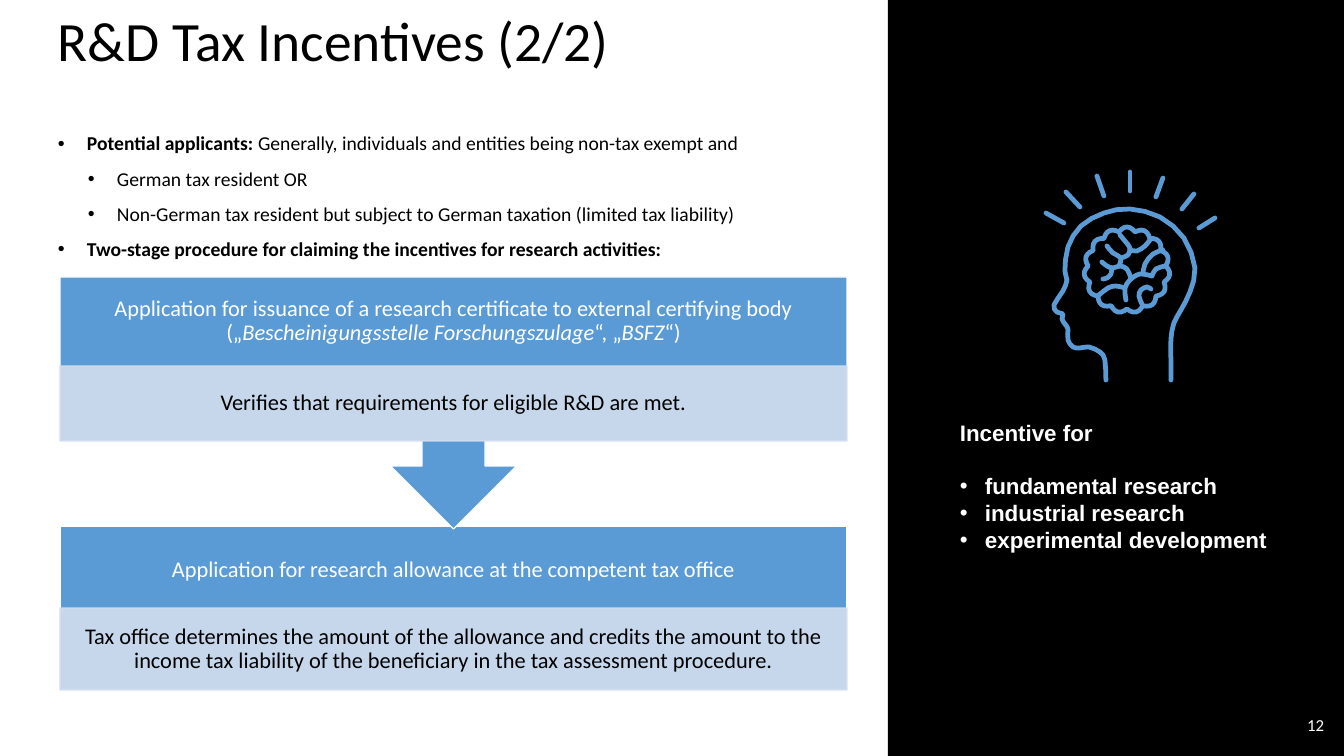
from math import cos, pi, sin

from lxml.etree import SubElement
from pptx import Presentation
from pptx.dml.color import RGBColor
from pptx.enum.shapes import MSO_SHAPE as SHAPE
from pptx.enum.text import MSO_ANCHOR as ANCHOR, PP_ALIGN as ALIGN
from pptx.oxml.ns import qn
from pptx.util import Pt

PX = 9071  # EMU per px, 100.8 px to the inch
COLORS = {"black": "000000", "white": "FFFFFF", "blue": "5B9BD5", "pale": "D2DEEF"}
COLORS = {name: RGBColor.from_string(value) for name, value in COLORS.items()}

presentation = Presentation()
presentation.slide_width, presentation.slide_height = 1344 * PX, 756 * PX
slide = presentation.slides.add_slide(presentation.slide_layouts[6])


def add_text(frame, text, size, color="black", font="Calibri", bold=False, align=ALIGN.LEFT,
             spacing=None, before=0, after=0, bullet_at=None, hang=0):
    """Add a paragraph; text is a string or a list of (text, style) with style "", "b" or "i"."""
    paragraph = frame.paragraphs[0]
    if paragraph.runs:
        paragraph = frame.add_paragraph()
    paragraph.alignment, paragraph.line_spacing = align, spacing
    paragraph.space_before, paragraph.space_after = Pt(before), Pt(after)
    if bullet_at is not None:
        properties = paragraph._p.get_or_add_pPr()
        properties.set("marL", str((bullet_at + hang) * PX))
        properties.set("indent", str(-hang * PX))
        SubElement(properties, qn("a:buFont")).set("typeface", "Arial")
        SubElement(properties, qn("a:buChar")).set("char", "•")
    for words, style in [(text, "")] if isinstance(text, str) else text:
        run = paragraph.add_run()
        run.text = words
        run.font.name, run.font.size = font, Pt(size)
        run.font.bold, run.font.italic = bold or style == "b", style == "i"
        run.font.color.rgb = COLORS[color]


def add_box(x, y, width, height, kind=None, fill=None, line=None, anchor=ANCHOR.MIDDLE, inset=None):
    """Add a preset shape, or a text box when kind is None."""
    place = [length * PX for length in (x, y, width, height)]
    if kind is None:
        shape = slide.shapes.add_textbox(*place)
    else:
        shape = slide.shapes.add_shape(kind, *place)
        shape.shadow.inherit = False
        shape.fill.solid()
        shape.fill.fore_color.rgb = COLORS[fill]
        if line:
            shape.line.color.rgb = COLORS[line]
            shape.line.width = Pt(1)
        else:
            shape.line.fill.background()
    frame = shape.text_frame
    frame.word_wrap, frame.vertical_anchor = True, anchor
    if inset:
        frame.margin_left = frame.margin_right = 12 * PX
        frame.margin_top = frame.margin_bottom = inset * PX
    return shape


# Panel, title and bullet list
add_box(888, 0, 456, 756, SHAPE.RECTANGLE, "black")
title = add_box(48, 23, 816, 41)
add_text(title.text_frame, "R&D Tax Incentives (2/2)", 39.6, spacing=0.9)

body = add_box(48, 129, 816, 148, anchor=ANCHOR.TOP)
for bullet_at, text in [
    (0, [("Potential applicants: ", "b"),
         ("Generally, individuals and entities being non-tax exempt and", "")]),
    (30, "German tax resident OR"),
    (30, "Non-German tax resident but subject to German taxation (limited tax liability)"),
    (0, [("Two-stage procedure for claiming the incentives for research activities:", "b")]),
]:
    add_text(body.text_frame, text, 14, spacing=0.9, before=10, bullet_at=bullet_at, hang=29)

# Two-stage procedure: the second stage lies behind the arrow of the first
STAGE_X, STAGE_WIDTH, HEADING_HEIGHT = 60, 787, 89
for kind, rotation, top, height, detail_top, detail_height, heading, detail in [
    (SHAPE.RECTANGLE, 0, 526, 164, 608, 82,
     "Application for research allowance at the competent tax office",
     "Tax office determines the amount of the allowance and credits the amount to the "
     "income tax liability of the beneficiary in the tax assessment procedure."),
    (SHAPE.UP_ARROW_CALLOUT, 180, 277, 252, 366, 75,
     [("Application for issuance of a research certificate to external certifying body („", ""),
      ("Bescheinigungsstelle Forschungszulage", "i"), ("“, „", ""), ("BSFZ", "i"), ("“)", "")],
     "Verifies that requirements for eligible R&D are met."),
]:
    stage = add_box(STAGE_X, top, STAGE_WIDTH, height, kind, "blue", "white")
    stage.rotation = rotation
    heading_box = add_box(STAGE_X, top, STAGE_WIDTH, HEADING_HEIGHT, inset=12)
    add_text(heading_box.text_frame, heading, 16, "white", align=ALIGN.CENTER, spacing=0.9)
    detail_box = add_box(STAGE_X, detail_top, STAGE_WIDTH, detail_height,
                         SHAPE.RECTANGLE, "pale", "pale", inset=2)
    for color in detail_box.element.spPr.iter(qn("a:srgbClr")):
        SubElement(color, qn("a:alpha")).set("val", "90000")
    add_text(detail_box.text_frame, detail, 16, align=ALIGN.CENTER, spacing=0.9)

number = add_box(1032, 705, 302, 40)
add_text(number.text_frame, "12", 12, "white", align=ALIGN.RIGHT)

# Head icon: one outline with smooth strokes for head and brain folds, and rays above
head = [(1171, 380), (1171, 360), (1171, 339), (1174, 323), (1181, 310), (1190, 292),
        (1195, 268), (1184, 238), (1160, 217), (1130, 209), (1104, 213), (1081, 226),
        (1068, 247), (1065, 271), (1067, 280), (1063, 291), (1054, 305), (1057, 312),
        (1063, 314), (1062, 319), (1065, 324), (1068, 329), (1068, 340), (1073, 347),
        (1080, 348), (1089, 347), (1100, 352), (1105, 360), (1106, 380)]
folds = [
    [(1099, 295), (1108, 288), (1116, 286), (1125, 288)],
    [(1126, 300), (1125, 288), (1130, 280), (1137, 275), (1143, 274), (1152, 276)],
    [(1152, 276), (1156, 269), (1165, 266)],
    [(1131, 278), (1127, 269), (1120, 266), (1113, 268), (1107, 266), (1102, 262)],
    [(1112, 268), (1111, 274), (1107, 278), (1103, 279)],
    [(1119, 266), (1121, 258), (1113, 253), (1107, 246)],
    [(1121, 258), (1128, 255), (1130, 248), (1125, 241), (1120, 235)],
    [(1130, 250), (1137, 251), (1145, 246), (1150, 240)],
    [(1143, 274), (1145, 264), (1153, 254), (1163, 250)],
    [(1142, 304), (1139, 296), (1141, 290), (1147, 287), (1151, 289)],
]
rays = [[(1046, 213), (1064, 223)], [(1066, 192), (1080, 207)], [(1097, 176), (1104, 196)],
        [(1130, 172), (1130, 191)], [(1163, 178), (1156, 197)], [(1194, 194), (1182, 209)],
        [(1215, 218), (1199, 228)]]

BRAIN_X, BRAIN_Y, BRAIN_RADIUS, LOBES, STEPS = 1127, 270, 39, 15, 90
brain = []
for step in range(STEPS + 1):
    angle = 2 * pi * step / STEPS
    radius = BRAIN_RADIUS + 4 * abs(cos(LOBES / 2 * angle))
    brain.append((BRAIN_X + radius * sin(angle), BRAIN_Y - radius * cos(angle)))

strokes = [brain, *rays]
for knots in [head, *folds]:
    ends = [knots[0], *knots, knots[-1]]
    points = [knots[0]]
    for a, b, c, d in zip(ends, ends[1:], ends[2:], ends[3:]):
        # Midpoint of the Catmull-Rom spline from b to c, then c
        points.append(tuple((9 * (q + r) - p - s) / 16 for p, q, r, s in zip(a, b, c, d)))
        points.append(c)
    strokes.append(points)

builder = slide.shapes.build_freeform(*[round(length * PX) for length in strokes[0][0]])
for index, points in enumerate(strokes):
    start, *rest = [(round(x * PX), round(y * PX)) for x, y in points]
    if index:
        builder.move_to(*start)
    builder.add_line_segments(rest, close=False)
icon = builder.convert_to_shape()
icon.shadow.inherit = False
icon.fill.background()
icon.line.color.rgb = COLORS["blue"]
icon.line.width = Pt(3.4)
icon.element.spPr.find(qn("a:ln")).set("cap", "rnd")

# Incentive list
incentives = add_box(950, 414, 360, 173, anchor=ANCHOR.TOP)
add_text(incentives.text_frame, "Incentive for", 16, "white", "Arial", bold=True, after=19)
for text in ("fundamental research", "industrial research", "experimental development"):
    add_text(incentives.text_frame, text, 16, "white", "Arial", bold=True,
             bullet_at=0, hang=25)

presentation.save("out.pptx")
